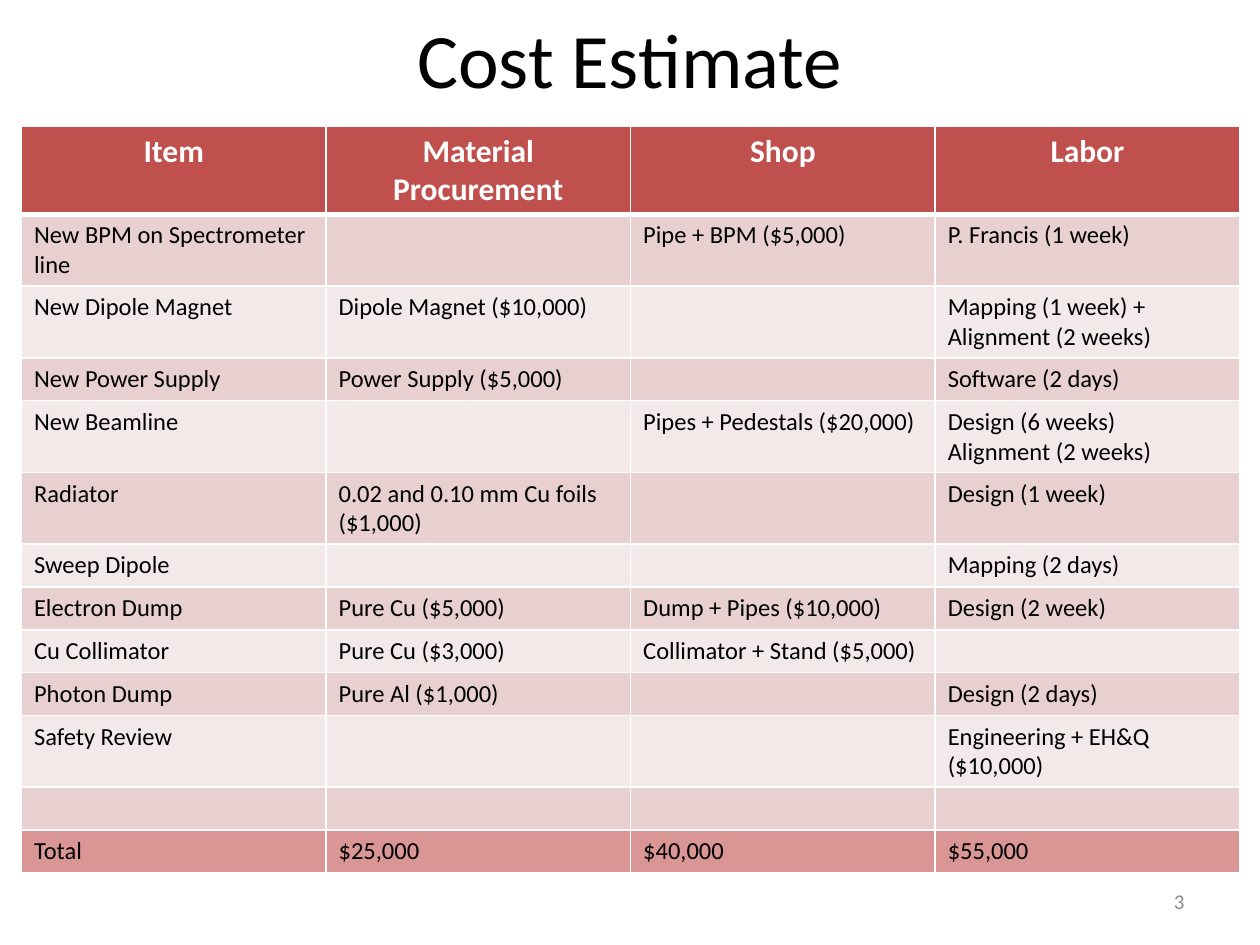
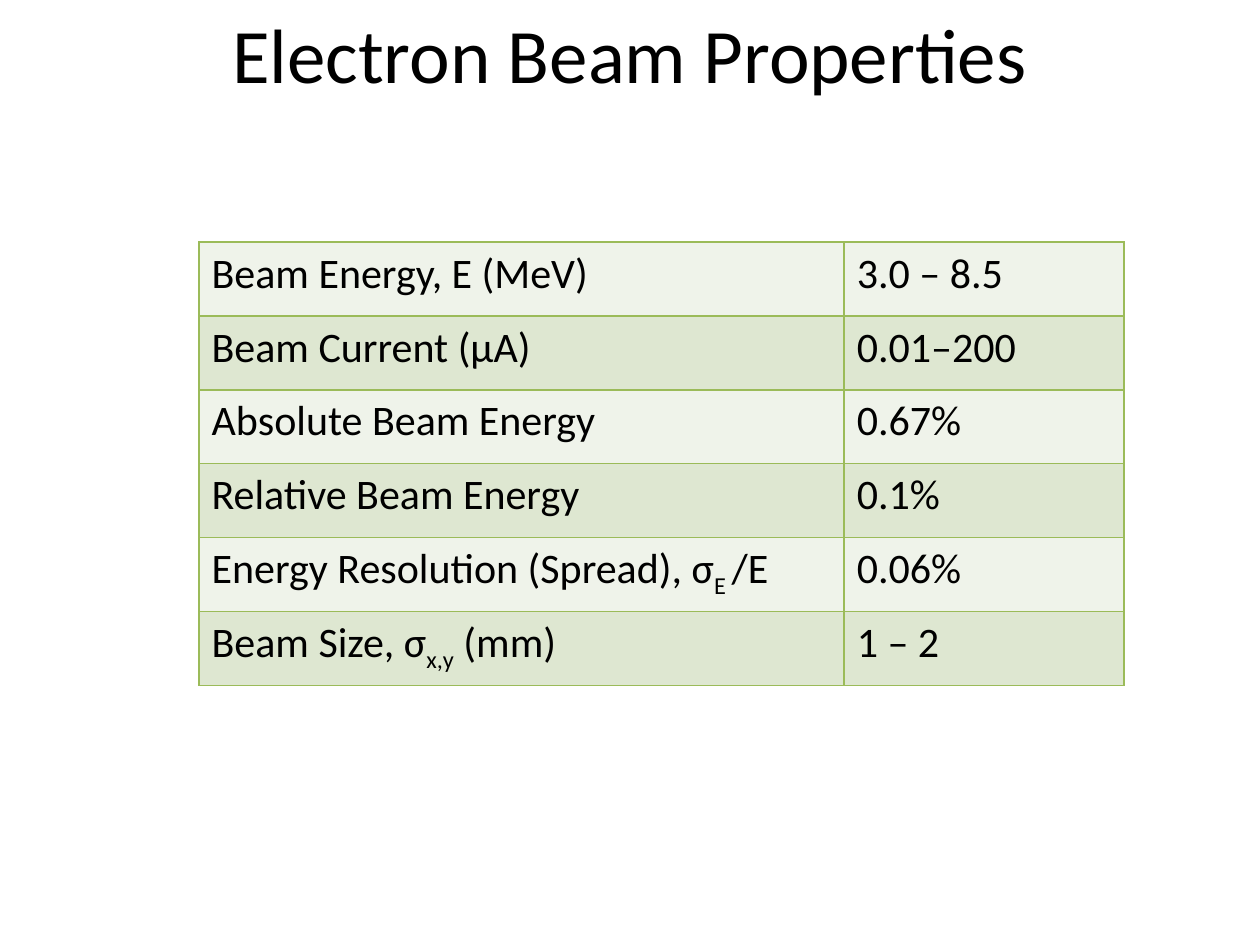
"""Build the cost estimate and electron beam slides."""
import lxml.etree
import pptx
import pptx.dml.color
import pptx.enum.text
import pptx.oxml.ns
import pptx.util

Inches = pptx.util.Inches
ALIGN = pptx.enum.text.PP_ALIGN
FONT = "Calibri"
COLORS = {
    "black": "000000", "white": "FFFFFF", "number": "8C8C8C",
    "header": "C0504D", "total": "D99694", "red_dark": "E8D0D0", "red_light": "F4E9E9",
    "green": "9BBB59", "green_dark": "DEE7D1", "green_light": "EFF3EA",
}
COSTS = [
    ["Item", "Material\nProcurement", "Shop", "Labor"],
    ["New BPM on Spectrometer line", "", "Pipe + BPM ($5,000)", "P. Francis (1 week)"],
    ["New Dipole Magnet", "Dipole Magnet ($10,000)", "", "Mapping (1 week) + Alignment (2 weeks)"],
    ["New Power Supply", "Power Supply ($5,000)", "", "Software (2 days)"],
    ["New Beamline", "", "Pipes + Pedestals ($20,000)", "Design (6 weeks)\nAlignment (2 weeks)"],
    ["Radiator", "0.02 and 0.10 mm Cu foils ($1,000)", "", "Design (1 week)"],
    ["Sweep Dipole", "", "", "Mapping (2 days)"],
    ["Electron Dump", "Pure Cu ($5,000)", "Dump + Pipes ($10,000)", "Design (2 week)"],
    ["Cu Collimator", "Pure Cu ($3,000)", "Collimator + Stand ($5,000)", ""],
    ["Photon Dump", "Pure Al ($1,000)", "", "Design (2 days)"],
    ["Safety Review", "", "", "Engineering + EH&Q ($10,000)"],
    ["", "", "", ""],
    ["Total", "$25,000", "$40,000", "$55,000"],
]
TWO_LINE_ROWS = {1, 2, 4, 5, 10}
BEAM_PROPERTIES = [
    ["Beam Energy, E (MeV)", "3.0 – 8.5"],
    ["Beam Current (µA)", "0.01–200"],
    ["Absolute Beam Energy", "0.67%"],
    ["Relative Beam Energy", "0.1%"],
    ["Energy Resolution (Spread), σ|E |/E", "0.06%"],
    ["Beam Size, σ|x,y| (mm)", "1 – 2"],
]


def rgb(name):
    """Return the named colour."""
    return pptx.dml.color.RGBColor.from_string(COLORS[name])


def write_text(frame, text, size, color="black", bold=False, align=ALIGN.LEFT):
    """Write one paragraph per line; text between bars is subscript."""
    for index, line in enumerate(text.split("\n")):
        paragraph = frame.add_paragraph() if index else frame.paragraphs[0]
        paragraph.alignment = align
        if not line:
            lxml.etree.SubElement(paragraph._p, pptx.oxml.ns.qn("a:endParaRPr"), sz=str(size * 100))
            continue
        for position, piece in enumerate(line.split("|")):
            run = paragraph.add_run()
            run.text = piece
            run.font.name = FONT
            run.font.size = pptx.util.Pt(size)
            run.font.bold = bold
            run.font.color.rgb = rgb(color)
            if position % 2:
                run._r.get_or_add_rPr().set("baseline", "-25000")


def add_text_box(slide, box, text, **text_format):
    """Add a vertically centred text box."""
    shape = slide.shapes.add_textbox(*map(Inches, box))
    frame = shape.text_frame
    frame.word_wrap = True
    frame.vertical_anchor = pptx.enum.text.MSO_ANCHOR.MIDDLE
    write_text(frame, text, **text_format)


def add_title(slide, text, height):
    """Add the centred slide title at the top edge."""
    add_text_box(slide, (0.5, 0, 9, height), text, size=44, align=ALIGN.CENTER)


def set_borders(cell, color, top=1, bottom=1):
    """Draw the four borders of a cell with widths in points."""
    properties = cell._tc.get_or_add_tcPr()
    for side, width in (("L", 1), ("R", 1), ("T", top), ("B", bottom)):
        line = lxml.etree.SubElement(
            properties, pptx.oxml.ns.qn(f"a:ln{side}"), w=str(pptx.util.Pt(width)))
        fill = lxml.etree.SubElement(line, pptx.oxml.ns.qn("a:solidFill"))
        lxml.etree.SubElement(fill, pptx.oxml.ns.qn("a:srgbClr"), val=COLORS[color])


def add_plain_table(slide, left, top, widths, heights):
    """Add a table with the given column widths and row heights."""
    table = slide.shapes.add_table(
        len(heights), len(widths), Inches(left), Inches(top),
        Inches(sum(widths)), Inches(sum(heights))).table
    for column, width in zip(table.columns, widths):
        column.width = Inches(width)
    for row, height in zip(table.rows, heights):
        row.height = Inches(height)
    return table


def fill_cell(cell, text, fill, border, top=1, bottom=1, **text_format):
    """Set the borders, fill and text of a cell."""
    set_borders(cell, border, top, bottom)
    cell.fill.solid()
    cell.fill.fore_color.rgb = rgb(fill)
    write_text(cell.text_frame, text, **text_format)


def add_cost_table(slide, left, top, width):
    """Add the cost table with its header, bands and total row."""
    columns = len(COSTS[0])
    last = len(COSTS) - 1
    heights = [0.7] + [0.57 if row in TWO_LINE_ROWS else 0.34 for row in range(1, last + 1)]
    table = add_plain_table(slide, left, top, [width / columns] * columns, heights)
    header_format = dict(size=18, color="white", bold=True, align=ALIGN.CENTER, bottom=3)
    for row, texts in enumerate(COSTS):
        band = "red_dark" if row % 2 else "red_light"
        fill = {0: "header", last: "total"}.get(row, band)
        row_format = dict(size=14, top=3 if row == 1 else 1) if row else header_format
        for column, text in enumerate(texts):
            fill_cell(table.cell(row, column), text, fill, "white", **row_format)


def add_beam_table(slide, left, top):
    """Add the banded table of beam properties."""
    table = add_plain_table(slide, left, top, [5.12, 2.22], [0.587] * len(BEAM_PROPERTIES))
    for row, texts in enumerate(BEAM_PROPERTIES):
        fill = "green_dark" if row % 2 else "green_light"
        for column, text in enumerate(texts):
            fill_cell(table.cell(row, column), text, fill, "green", size=24)


def build_cost_slide(slide):
    """Build the cost estimate slide."""
    add_title(slide, "Cost Estimate", 0.92)
    add_text_box(slide, (7.17, 6.95, 2.33, 0.4), "3",
                 size=12, color="number", align=ALIGN.RIGHT)
    add_cost_table(slide, 0.17, 1, 9.67)


def build_beam_slide(slide):
    """Build the electron beam properties slide."""
    add_title(slide, "Electron Beam Properties", 0.83)
    add_beam_table(slide, 1.58, 1.92)


def main():
    """Build and save the presentation."""
    presentation = pptx.Presentation()
    presentation.slide_width = Inches(10)
    presentation.slide_height = Inches(7.5)
    for build in (build_cost_slide, build_beam_slide):
        build(presentation.slides.add_slide(presentation.slide_layouts[6]))
    presentation.save("out.pptx")


if __name__ == "__main__":
    main()
